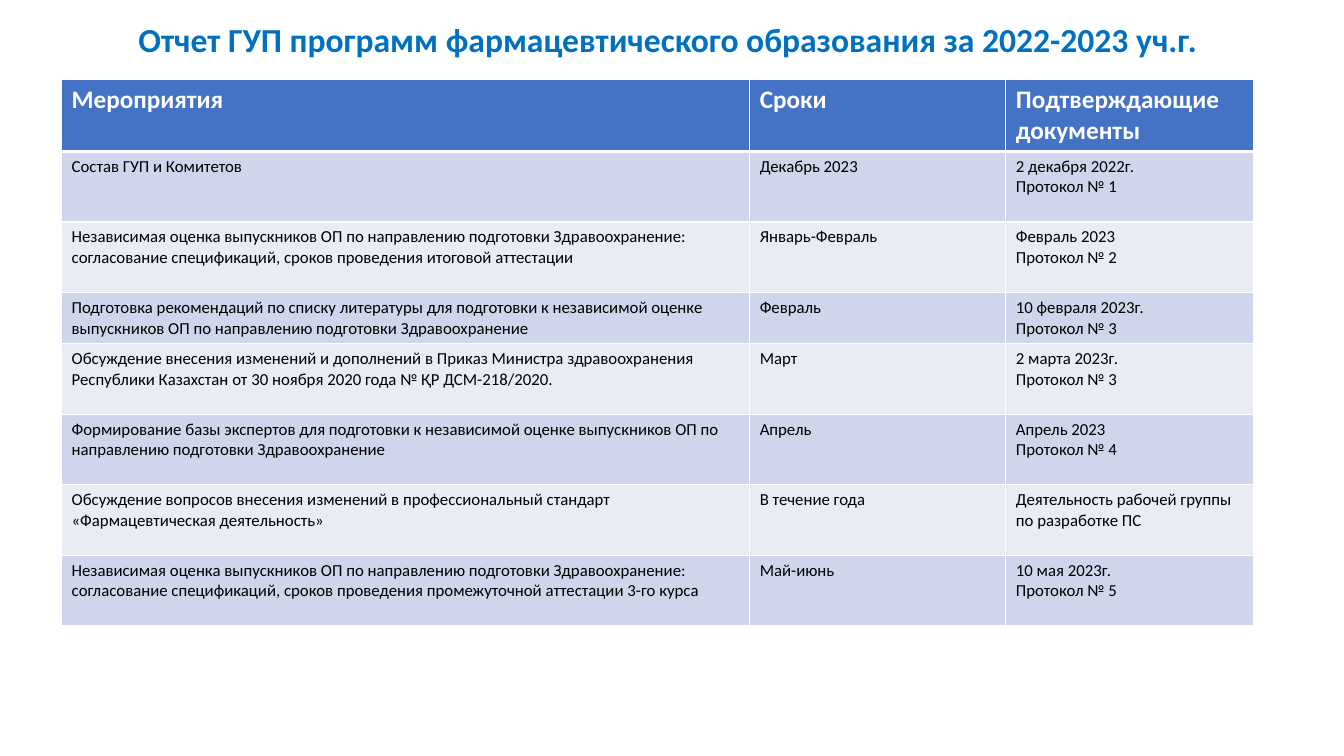
from lxml import etree
from pptx import Presentation
from pptx.dml.color import RGBColor
from pptx.enum.text import MSO_ANCHOR, PP_ALIGN
from pptx.oxml.ns import qn
from pptx.util import Pt

CENTER = PP_ALIGN.CENTER
MIDDLE = MSO_ANCHOR.MIDDLE
TITLE_ONLY = 5

TITLE = "Отчет ГУП программ фармацевтического образования за 2022-2023 уч.г."
HEADER = ("Мероприятия", "Сроки", "Подтверждающие документы")
EVENTS = [
    ("Состав ГУП и Комитетов",
     "Декабрь 2023", "2 декабря 2022г.\nПротокол № 1"),
    ("Независимая оценка выпускников ОП по направлению подготовки Здравоохранение: "
     "согласование спецификаций, сроков проведения итоговой аттестации",
     "Январь-Февраль", "Февраль 2023\nПротокол № 2"),
    ("Подготовка рекомендаций по списку литературы для подготовки к независимой оценке "
     "выпускников ОП по направлению подготовки Здравоохранение",
     "Февраль", "10 февраля 2023г.\nПротокол № 3"),
    ("Обсуждение внесения изменений и дополнений в Приказ Министра здравоохранения\n"
     "Республики Казахстан от 30 ноября 2020 года № ҚР ДСМ-218/2020.",
     "Март", "2 марта 2023г.\nПротокол № 3"),
    ("Формирование базы экспертов для подготовки к независимой оценке выпускников ОП по "
     "направлению подготовки Здравоохранение",
     "Апрель", "Апрель 2023\nПротокол № 4"),
    ("Обсуждение вопросов внесения изменений в профессиональный стандарт "
     "«Фармацевтическая деятельность»",
     "В течение года", "Деятельность рабочей группы по разработке ПС"),
    ("Независимая оценка выпускников ОП по направлению подготовки Здравоохранение: "
     "согласование спецификаций, сроков проведения промежуточной аттестации 3-го курса",
     "Май-июнь", "10 мая 2023г.\nПротокол № 5"),
]

FONT = "Calibri"
WHITE, BLACK, BLUE = "FFFFFF", "000000", "0070C0"
HEADER_FILL = "4472C4"
BANDS = ("E9EBF5", "CFD5EA")
LEFT, TABLE_TOP = 44, 57
COLUMN_WIDTHS = (491.5, 183, 177)
ROW_HEIGHT, LOW_ROW_HEIGHT, LOW_ROW = 50.4, 36, 3
THIN, THICK = 1, 3


def color(value):
    return RGBColor.from_string(value)


def format_text(frame, size, value, bold):
    for para in frame.paragraphs:
        for span in para.runs:
            span.font.name = FONT
            span.font.size = Pt(size)
            span.font.bold = bold
            span.font.color.rgb = color(value)


def set_borders(cell, top, bottom):
    """Draw white cell borders; top and bottom are widths in points."""
    properties = cell._tc.get_or_add_tcPr()
    widths = {"a:lnL": THIN, "a:lnR": THIN, "a:lnT": top, "a:lnB": bottom}
    for position, (tag, width) in enumerate(widths.items()):
        line = etree.Element(qn(tag), w=str(Pt(width)))
        fill = etree.SubElement(line, qn("a:solidFill"))
        etree.SubElement(fill, qn("a:srgbClr"), val=WHITE)
        properties.insert(position, line)


def add_title(page):
    box = page.shapes.title
    box.left, box.top, box.width, box.height = Pt(LEFT), Pt(10), Pt(866), Pt(36)
    frame = box.text_frame
    frame.text = TITLE
    frame.word_wrap = True
    frame.vertical_anchor = MIDDLE
    frame.paragraphs[0].alignment = CENTER
    format_text(frame, 24, BLUE, True)


def add_report_table(page):
    rows = [HEADER] + EVENTS
    heights = [LOW_ROW_HEIGHT if index == LOW_ROW else ROW_HEIGHT
               for index in range(len(rows))]
    table = page.shapes.add_table(
        len(rows), len(HEADER), Pt(LEFT), Pt(TABLE_TOP),
        Pt(sum(COLUMN_WIDTHS)), Pt(sum(heights))).table
    for column, width in zip(table.columns, COLUMN_WIDTHS):
        column.width = Pt(width)
    for index, (texts, height) in enumerate(zip(rows, heights)):
        table.rows[index].height = Pt(height)
        is_header = index == 0
        for number, text in enumerate(texts):
            cell = table.cell(index, number)
            cell.text_frame.text = text
            cell.fill.solid()
            cell.fill.fore_color.rgb = color(HEADER_FILL if is_header else BANDS[index % 2])
            set_borders(cell, THICK if index == 1 else THIN, THICK if is_header else THIN)
            if is_header:
                format_text(cell.text_frame, 18, WHITE, True)
            else:
                format_text(cell.text_frame, 12, BLACK, False)


def main():
    deck = Presentation()
    deck.slide_width, deck.slide_height = Pt(960), Pt(540)
    page = deck.slides.add_slide(deck.slide_layouts[TITLE_ONLY])
    add_title(page)
    add_report_table(page)
    deck.save("out.pptx")


if __name__ == "__main__":
    main()
